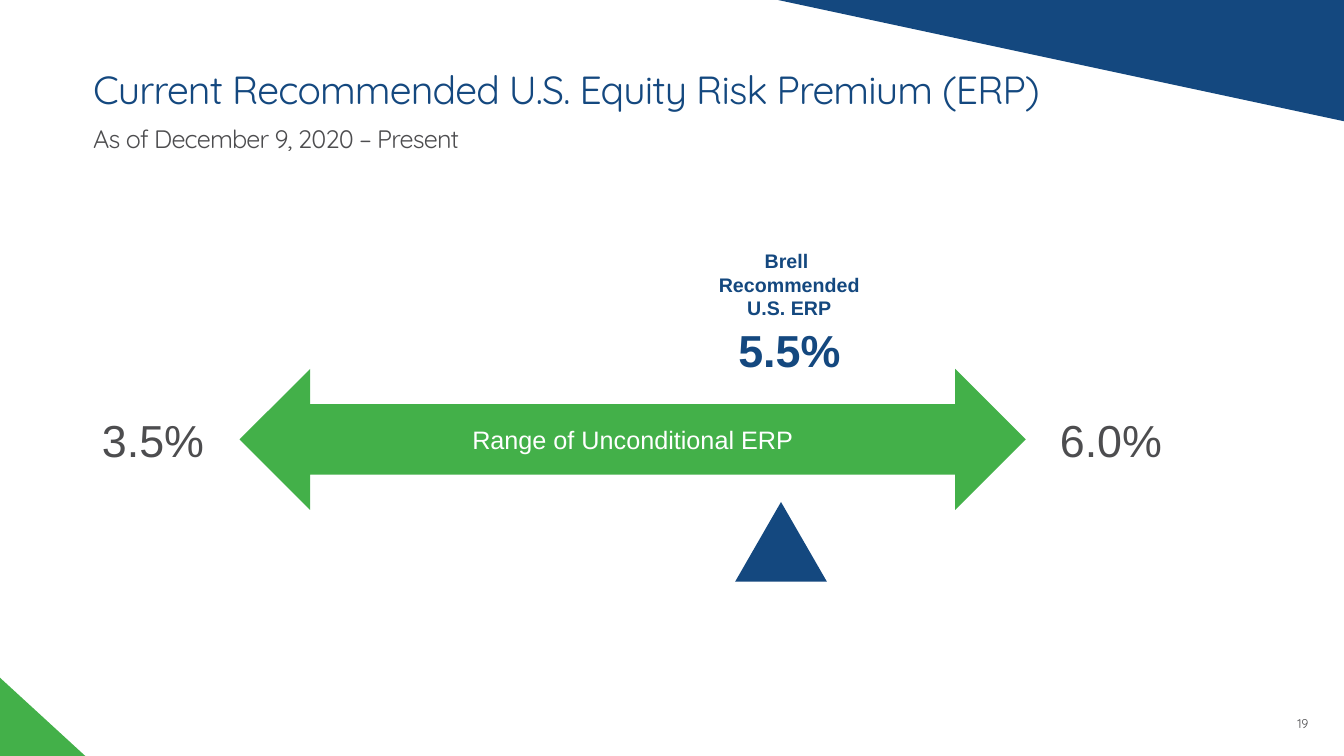
from dataclasses import dataclass, field

from lxml import etree
from pptx import Presentation
from pptx import util as u
from pptx.dml.color import RGBColor
from pptx.enum import shapes, text
from pptx.oxml import ns

BLUE = RGBColor(0x14, 0x48, 0x7F)
GREEN = RGBColor(0x43, 0xB0, 0x49)
GREY = RGBColor(0x4D, 0x4D, 0x4F)
WHITE = RGBColor(0xFF, 0xFF, 0xFF)

WIDTH, HEIGHT = u.Inches(13.33), u.Inches(7.5)
COLUMNS, ROWS = 80, 45

LEFT, CENTER = text.PP_ALIGN.LEFT, text.PP_ALIGN.CENTER
TOP, MIDDLE, BOTTOM = (text.MSO_ANCHOR.TOP, text.MSO_ANCHOR.MIDDLE,
                       text.MSO_ANCHOR.BOTTOM)


@dataclass
class Area:
    """A place on the slide, in grid columns and rows."""
    column: float
    row: float
    columns: float
    rows: float

    def box(self) -> tuple[int, int, int, int]:
        return (across(self.column), down(self.row),
                across(self.columns), down(self.rows))


@dataclass
class Wording:
    lines: list[str]
    size: float
    color: RGBColor
    font: str = "Arial"
    bold: bool = False
    align: text.PP_ALIGN = LEFT
    frame: dict = field(default_factory=dict)
    paragraph: dict = field(default_factory=dict)
    tracking: int = 0


@dataclass
class Heading:
    placeholder: int
    area: Area
    wording: Wording


@dataclass
class Label:
    area: Area
    wording: Wording


@dataclass
class Figure:
    kind: shapes.MSO_SHAPE
    area: Area
    color: RGBColor
    wording: Wording | None = None


@dataclass
class Corner:
    points: list[tuple[float, float]]
    color: RGBColor


def across(columns: float) -> int:
    return round(WIDTH * columns / COLUMNS)


def down(rows: float) -> int:
    return round(HEIGHT * rows / ROWS)


def apply(target, values: dict) -> None:
    for name, value in values.items():
        setattr(target, name, value)


def write(frame, wording: Wording) -> None:
    apply(frame, wording.frame)
    for index, line in enumerate(wording.lines):
        paragraph = frame.paragraphs[0] if index == 0 else frame.add_paragraph()
        apply(paragraph, {"alignment": wording.align, **wording.paragraph})
        run = paragraph.add_run()
        run.text = line
        apply(run.font, {"name": wording.font, "size": u.Pt(wording.size),
                         "bold": wording.bold})
        run.font.color.rgb = wording.color
        if wording.tracking:
            run.font._element.set("spc", str(wording.tracking))


def paint(shape, color: RGBColor) -> None:
    shape.shadow.inherit = False
    shape.fill.solid()
    shape.fill.fore_color.rgb = color
    shape.line.fill.background()


def draw_corner(slide, corner: Corner) -> None:
    start, *rest = [(across(x), down(y)) for x, y in corner.points]
    builder = slide.shapes.build_freeform(*start)
    builder.add_line_segments(rest, close=True)
    paint(builder.convert_to_shape(), corner.color)


def draw_heading(slide, heading: Heading) -> None:
    holder = slide.placeholders[heading.placeholder]
    apply(holder, dict(zip(("left", "top", "width", "height"), heading.area.box())))
    write(holder.text_frame, heading.wording)
    properties = holder.text_frame.paragraphs[0]._p.get_or_add_pPr()
    for name in ("marL", "indent"):
        properties.set(name, "0")
    etree.SubElement(properties, ns.qn("a:buNone"))


def draw_label(slide, label: Label) -> None:
    write(slide.shapes.add_textbox(*label.area.box()).text_frame, label.wording)


def draw_figure(slide, figure: Figure) -> None:
    shape = slide.shapes.add_shape(figure.kind, *figure.area.box())
    paint(shape, figure.color)
    if figure.wording:
        write(shape.text_frame, figure.wording)


# Shared formats
HEADING_FRAME = {"vertical_anchor": MIDDLE, "word_wrap": True,
                 "auto_size": text.MSO_AUTO_SIZE.NONE}
HEADING_LINE = {"line_spacing": 1.13, "space_before": u.Pt(0)}
FITTED = {"vertical_anchor": TOP, "word_wrap": False,
          "auto_size": text.MSO_AUTO_SIZE.SHAPE_TO_FIT_TEXT}
NO_MARGINS = {f"margin_{side}": 0 for side in ("left", "top", "right", "bottom")}


def heading(placeholder: int, row: float, line: str, size: float,
            color: RGBColor) -> Heading:
    return Heading(placeholder, Area(4.95, row, 59.94, 2.46),
                   Wording([line], size, color, "Quicksand", frame=HEADING_FRAME,
                           paragraph=HEADING_LINE, tracking=-60))


def percentage(column: float, row: float, value: str, color: RGBColor = GREY,
               bold: bool = False) -> Label:
    return Label(Area(column, row, 7.5, 3.78),
                 Wording([value], 32, color, bold=bold, frame=FITTED))


# Slide content
CORNERS = [
    Corner([(46.3, 0), (COLUMNS, 0), (COLUMNS, 7.22)], BLUE),
    Corner([(0, 40.34), (5.08, ROWS), (0, ROWS)], GREEN),
]
HEADINGS = [
    heading(0, 3.9, "Current Recommended U.S. Equity Risk Premium (ERP)", 28, BLUE),
    heading(1, 6.9, "As of December 9, 2020 – Present", 18, GREY),
]
FIGURES = [
    Figure(shapes.MSO_SHAPE.LEFT_RIGHT_ARROW, Area(14.26, 21.96, 46.8, 8.4), GREEN,
           Wording(["Range of Unconditional ERP"], 18, WHITE, align=CENTER,
                   frame={"vertical_anchor": MIDDLE})),
    Figure(shapes.MSO_SHAPE.ISOSCELES_TRIANGLE, Area(43.76, 29.88, 5.46, 4.74), BLUE),
]
LABELS = [
    percentage(5.48, 24.26, "3.5%"),
    percentage(62.5, 24.26, "6.0%"),
    percentage(43.36, 18.92, "5.5%", BLUE, bold=True),
    Label(Area(42.06, 14.54, 9.84, 4.8),
          Wording(["Brell ", "Recommended ", "U.S. ERP"], 14, BLUE, bold=True,
                  align=CENTER, frame=FITTED)),
    # Page number
    Label(Area(77.22, 42.36, 2.82, 1.14),
          Wording(["19"], 9, GREY, "Quicksand",
                  frame={"vertical_anchor": BOTTOM, "word_wrap": True, **NO_MARGINS})),
]


def main() -> None:
    deck = Presentation()
    apply(deck, {"slide_width": WIDTH, "slide_height": HEIGHT})
    slide = deck.slides.add_slide(deck.slide_layouts[1])
    for draw, parts in ((draw_corner, CORNERS), (draw_heading, HEADINGS),
                        (draw_figure, FIGURES), (draw_label, LABELS)):
        for part in parts:
            draw(slide, part)
    deck.save("out.pptx")


if __name__ == "__main__":
    main()
